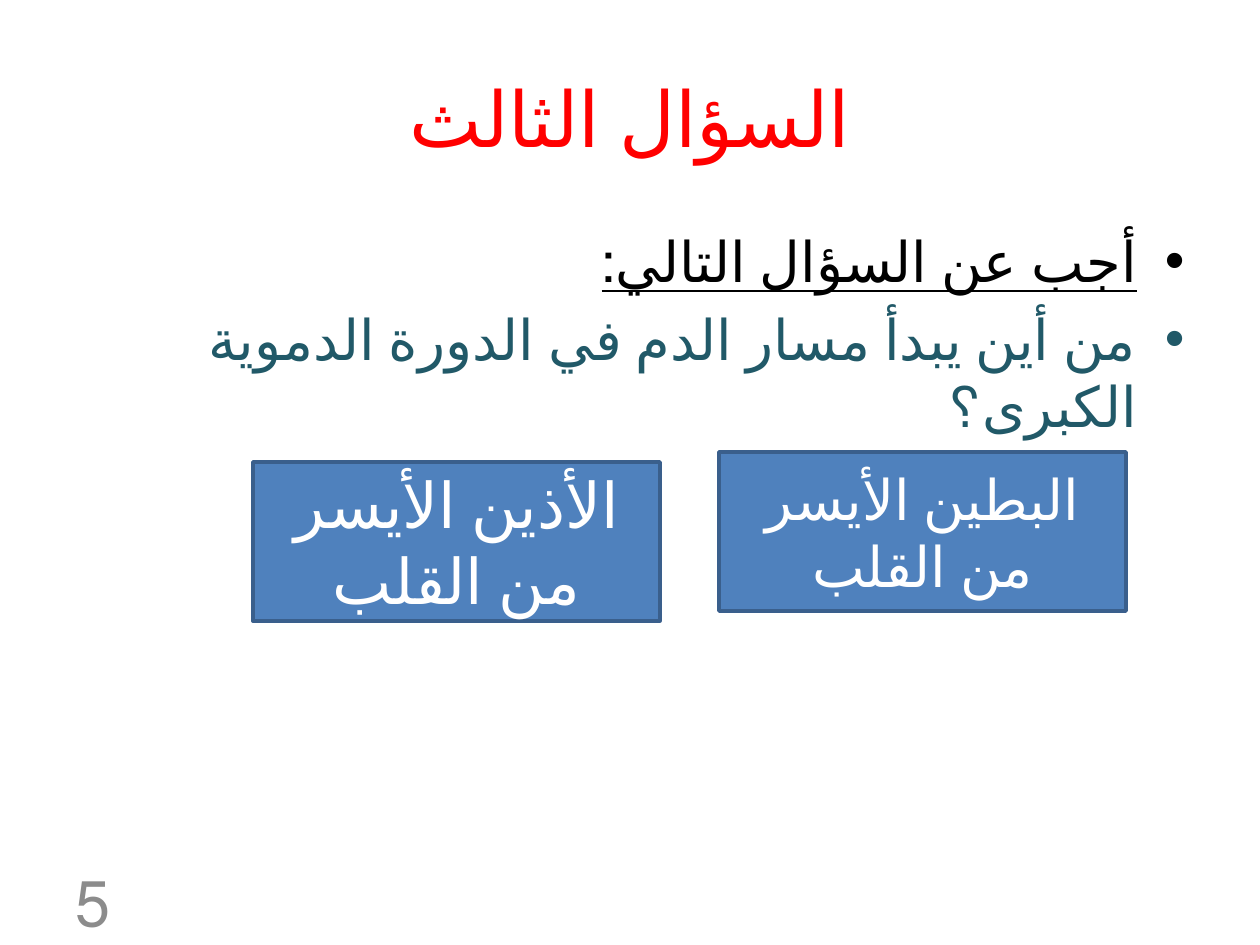
from dataclasses import dataclass

import pptx
import pptx.dml.color
import pptx.enum.lang
import pptx.enum.shapes
import pptx.enum.text
import pptx.util

PX = pptx.util.Inches(1) / 126
FONT = "Calibri"
ARABIC = pptx.enum.lang.MSO_LANGUAGE_ID.ARABIC
ALIGN = pptx.enum.text.PP_ALIGN
MIDDLE = pptx.enum.text.MSO_ANCHOR.MIDDLE
ANSWER_WIDTH, ANSWER_HEIGHT = 407, 159


@dataclass
class Answer:
    text: str
    left: int
    top: int
    size: int


ANSWERS = [
    Answer("البطين الأيسر من القلب", 719, 452, 32),
    Answer("الأذين الأيسر من القلب", 253, 462, 36),
]


def px(length: int) -> pptx.util.Emu:
    return pptx.util.Emu(round(length * PX))


def rgb(color: str) -> pptx.dml.color.RGBColor:
    return pptx.dml.color.RGBColor.from_string(color)


def place(shape, left: int, top: int, width: int, height: int) -> None:
    shape.left, shape.top = px(left), px(top)
    shape.width, shape.height = px(width), px(height)


def write(paragraph, text: str, size: int, color: str, alignment, underline: bool = False) -> None:
    """Fill a right-to-left paragraph with one formatted Arabic run."""
    paragraph.text = text
    paragraph.alignment = alignment
    paragraph._p.get_or_add_pPr().set("rtl", "1")
    font = paragraph.runs[0].font
    font.language_id = ARABIC
    font.name = FONT
    font.size = pptx.util.Pt(size)
    font.color.rgb = rgb(color)
    font.underline = underline


def add_answer(slide, answer: Answer) -> None:
    shape = slide.shapes.add_shape(
        pptx.enum.shapes.MSO_SHAPE.RECTANGLE,
        px(answer.left), px(answer.top), px(ANSWER_WIDTH), px(ANSWER_HEIGHT),
    )
    shape.shadow.inherit = False
    shape.fill.solid()
    shape.fill.fore_color.rgb = rgb("4F81BD")
    shape.line.color.rgb = rgb("3A5F8C")
    shape.line.width = pptx.util.Pt(2)
    shape.text_frame.word_wrap = True
    shape.text_frame.vertical_anchor = MIDDLE
    write(shape.text_frame.paragraphs[0], answer.text, answer.size, "FFFFFF", ALIGN.CENTER)


def add_slide_number(slide, number: int) -> None:
    box = slide.shapes.add_textbox(px(63), px(876), px(294), px(50))
    box.text_frame.word_wrap = True
    box.text_frame.vertical_anchor = MIDDLE
    write(box.text_frame.paragraphs[0], str(number), 36, "8C8C8C", ALIGN.LEFT)


def main() -> None:
    presentation = pptx.Presentation()
    presentation.slide_width = pptx.util.Inches(10)
    presentation.slide_height = pptx.util.Inches(7.5)
    slide = presentation.slides.add_slide(presentation.slide_layouts[1])

    title, body = slide.placeholders
    place(title, 63, 38, 1134, 158)
    write(title.text_frame.paragraphs[0], "السؤال الثالث", 44, "FF0000", ALIGN.CENTER)

    place(body, 63, 220, 1134, 624)
    instruction = body.text_frame.paragraphs[0]
    write(instruction, "أجب عن السؤال التالي:", 32, "000000", ALIGN.RIGHT, underline=True)
    question = body.text_frame.add_paragraph()
    write(question, "من أين يبدأ مسار الدم في الدورة الدموية الكبرى؟", 32, "215968", ALIGN.RIGHT)

    for answer in ANSWERS:
        add_answer(slide, answer)
    add_slide_number(slide, 5)
    presentation.save("out.pptx")


if __name__ == "__main__":
    main()
